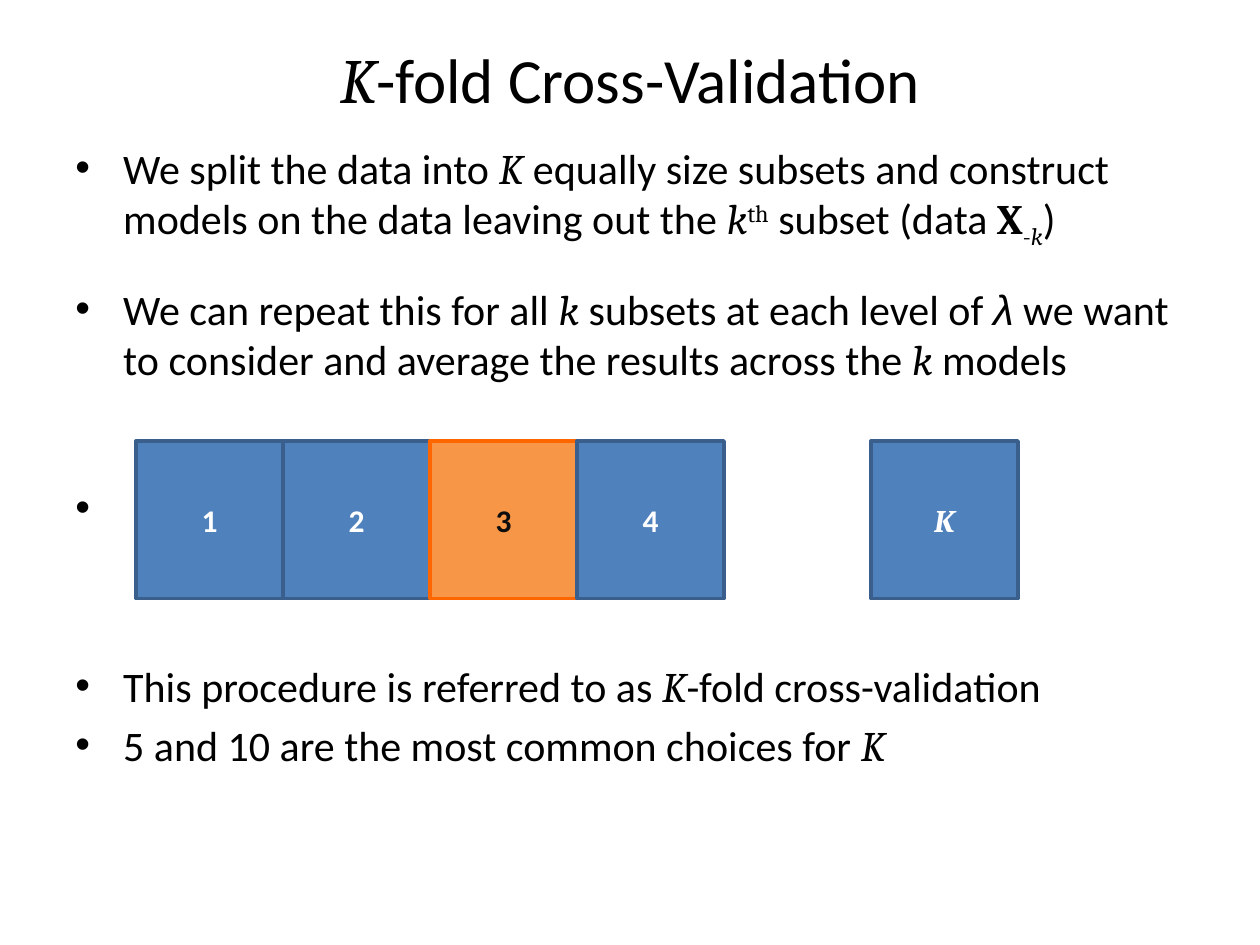
from dataclasses import dataclass

from lxml.etree import SubElement
from pptx import Presentation
from pptx.dml.color import RGBColor
from pptx.enum.shapes import MSO_SHAPE
from pptx.enum.text import MSO_ANCHOR, PP_ALIGN
from pptx.oxml.ns import qn
from pptx.util import Inches, Pt

BLACK = RGBColor(0x00, 0x00, 0x00)
NEAR_BLACK = RGBColor(0x0D, 0x0D, 0x0D)
WHITE = RGBColor(0xFF, 0xFF, 0xFF)
BLUE = RGBColor(0x4F, 0x81, 0xBD)
DARK_BLUE = RGBColor(0x3A, 0x5F, 0x8C)
ORANGE = RGBColor(0xF7, 0x96, 0x46)
DARK_ORANGE = RGBColor(0xFF, 0x66, 0x00)

SLIDE_WIDTH, SLIDE_HEIGHT = Inches(10), Inches(7.5)
MARGIN = 0.05  # share of the slide's width
HANGING_INDENT = Inches(0.38)
FOLD_LEFT, FOLD_TOP = Inches(1.08), Inches(3.5)
FOLD_WIDTH, FOLD_HEIGHT = SLIDE_WIDTH * 7 // 60, SLIDE_HEIGHT // 6


@dataclass(frozen=True)
class Span:
    text: str
    font: str = "Calibri"
    bold: bool = False
    italic: bool = False
    baseline: int = 0  # percent of the text size


@dataclass(frozen=True)
class Bullet:
    space_before: float
    spans: tuple[Span, ...]


@dataclass(frozen=True)
class Fold:
    column: int
    label: Span
    fill: RGBColor = BLUE
    line: RGBColor = DARK_BLUE
    color: RGBColor = WHITE


def math(text: str, baseline: int = 0) -> Span:
    return Span(text, "Cambria", italic=True, baseline=baseline)


TITLE = (math("K"), Span("-fold Cross-Validation"))

BULLETS = (
    Bullet(4.8, (
        Span("We split the data into "), math("K"),
        Span(" equally size subsets and construct models on the data leaving out the "),
        math("k"), Span("th", "Cambria", baseline=30), Span(" subset (data "),
        Span("X", "Cambria", bold=True), Span("-", "Cambria", baseline=-25),
        math("k", -25), Span(")"),
    )),
    Bullet(19, (
        Span("We can repeat this for all "), math("k"),
        Span(" subsets at each level of "), Span("λ", "Arial", italic=True),
        Span(" we want to consider and average the results across the "),
        math("k"), Span(" models"),
    )),
    Bullet(56, (Span(" "),)),
    Bullet(73, (
        Span("This procedure is referred to as "), math("K"),
        Span("-fold cross-validation"),
    )),
    Bullet(4.8, (Span("5 and 10 are the most common choices for "), math("K"))),
)

FOLDS = (
    Fold(0, Span("1", bold=True)),
    Fold(1, Span("2", bold=True)),
    Fold(2, Span("3", bold=True), ORANGE, DARK_ORANGE, NEAR_BLACK),
    Fold(3, Span("4", bold=True)),
    Fold(5, Span("K", "Cambria", bold=True, italic=True)),
)


def write_spans(para, spans: tuple[Span, ...], size: float, color: RGBColor) -> None:
    for span in spans:
        run = para.add_run()
        run.text = span.text
        font = run.font
        font.name, font.size = span.font, Pt(size)
        font.bold, font.italic = span.bold, span.italic
        font.color.rgb = color
        if span.baseline:
            font._element.set("baseline", str(span.baseline * 1000))


def add_bullet_mark(para) -> None:
    properties = para._p.get_or_add_pPr()
    properties.set("marL", str(HANGING_INDENT))
    properties.set("indent", str(-HANGING_INDENT))
    SubElement(properties, qn("a:buFont"), typeface="Arial")
    SubElement(properties, qn("a:buChar"), char="•")


def add_text_frame(page, top: float, height: float):
    """Add a full-width text box; top and height are shares of the slide's height."""
    box = page.shapes.add_textbox(
        int(SLIDE_WIDTH * MARGIN), int(SLIDE_HEIGHT * top),
        int(SLIDE_WIDTH * (1 - 2 * MARGIN)), int(SLIDE_HEIGHT * height),
    )
    box.text_frame.word_wrap = True
    return box.text_frame


def draw_title(page) -> None:
    frame = add_text_frame(page, 0, 1 / 6)
    frame.vertical_anchor = MSO_ANCHOR.MIDDLE
    para = frame.paragraphs[0]
    para.alignment = PP_ALIGN.CENTER
    write_spans(para, TITLE, 36, BLACK)


def draw_bullets(page) -> None:
    frame = add_text_frame(page, 0.144, 0.77)
    for index, bullet in enumerate(BULLETS):
        para = frame.add_paragraph() if index else frame.paragraphs[0]
        para.space_before = Pt(bullet.space_before)
        add_bullet_mark(para)
        write_spans(para, bullet.spans, 24, BLACK)


def draw_fold(page, fold: Fold) -> None:
    box = page.shapes.add_shape(
        MSO_SHAPE.RECTANGLE, FOLD_LEFT + fold.column * FOLD_WIDTH, FOLD_TOP,
        FOLD_WIDTH, FOLD_HEIGHT,
    )
    box.shadow.inherit = False
    box.fill.solid()
    box.fill.fore_color.rgb = fold.fill
    box.line.color.rgb = fold.line
    box.line.width = Pt(2)
    box.text_frame.vertical_anchor = MSO_ANCHOR.MIDDLE
    para = box.text_frame.paragraphs[0]
    para.alignment = PP_ALIGN.CENTER
    write_spans(para, (fold.label,), 18, fold.color)


def main() -> None:
    deck = Presentation()
    deck.slide_width, deck.slide_height = SLIDE_WIDTH, SLIDE_HEIGHT
    page = deck.slides.add_slide(deck.slide_layouts[6])
    draw_title(page)
    draw_bullets(page)
    for fold in FOLDS:
        draw_fold(page, fold)
    deck.save("out.pptx")


if __name__ == "__main__":
    main()
